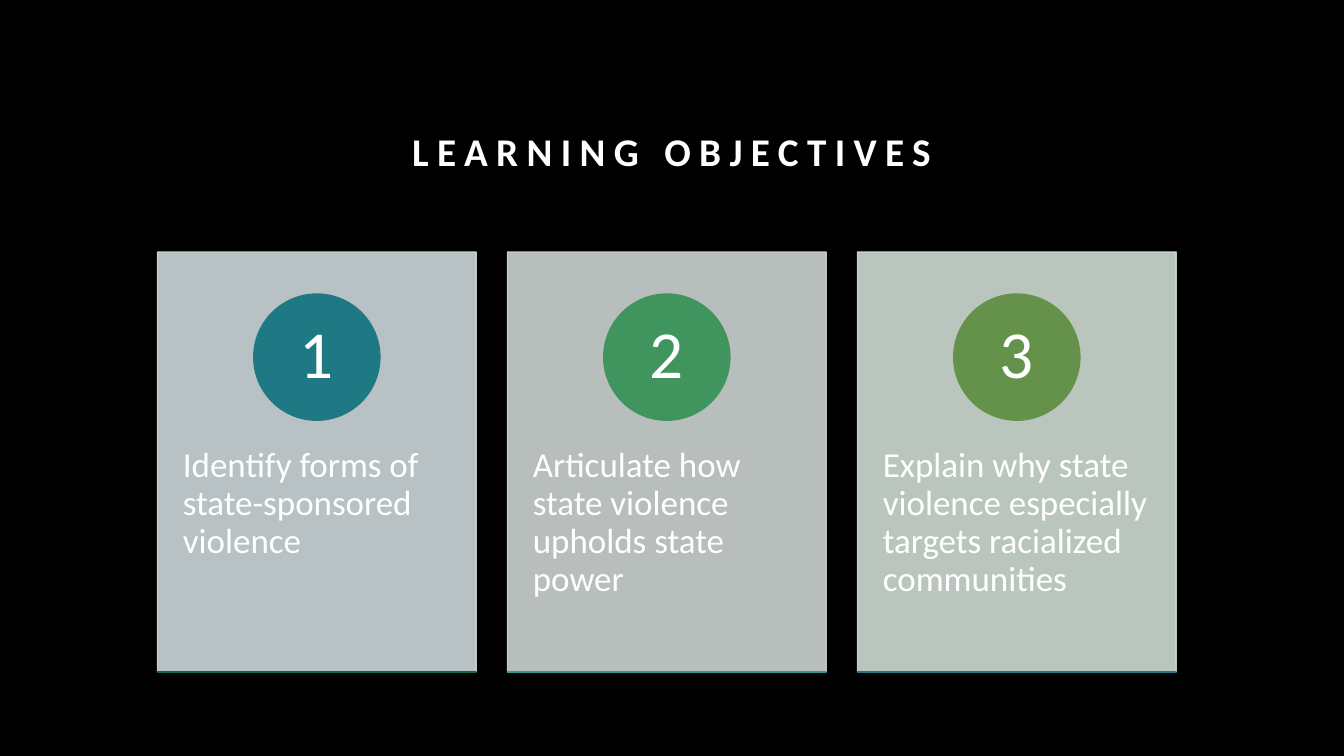
from lxml import etree
from pptx import Presentation
from pptx.dml.color import RGBColor
from pptx.enum import shapes, text
from pptx.oxml import ns
from pptx.util import Cm, Pt

# Content: number, goal, card colour, disc colour, base colour
TITLE = "LEARNING OBJECTIVES"
GOALS = [
    ("1", "Identify forms of state-sponsored violence", "mist", "teal", "pine"),
    ("2", "Articulate how state violence upholds state power", "ash", "green", "aqua"),
    ("3", "Explain why state violence especially targets racialized communities",
     "sage", "moss", "teal"),
]
HUES = {
    "black": "000000", "white": "FFFFFF",
    "mist": "CDD7D9", "ash": "CCD3D1", "sage": "CFDCD2",
    "teal": "1F7985", "green": "40945E", "moss": "64924A",
    "pine": "0D6756", "aqua": "389896",
}
FONT = "Calibri"

# Layout in centimetres
LEFT, TOP, WIDE, HIGH = 3.97, 6.35, 8.03, 10.58
STEP = 8.82
DISC, DROP = 3.18, 1.06
INNER = 2.24
GOAL_TOP, GOAL_HIGH = 10.37, 6.35


def hue(name):
    return RGBColor.from_string(HUES[name])


def fade(shape, part):
    for tint in shape._element.spPr.iter(ns.qn("a:srgbClr")):
        etree.SubElement(tint, ns.qn("a:alpha")).set("val", str(part * 1000))


def block(kind, x, y, w, h, name):
    shape = slide.shapes.add_shape(kind, Cm(x), Cm(y), Cm(w), Cm(h))
    shape.shadow.inherit = False
    shape.fill.solid()
    shape.fill.fore_color.rgb = hue(name)
    shape.line.color.rgb = hue(name)
    shape.line.width = Pt(1)
    return shape


def write(words, x, y, w, h, size, pad, anchor, align, lead):
    frame = slide.shapes.add_textbox(Cm(x), Cm(y), Cm(w), Cm(h)).text_frame
    frame.word_wrap = True
    frame.vertical_anchor = anchor
    frame.margin_left = frame.margin_right = Cm(pad[0])
    frame.margin_top = frame.margin_bottom = Cm(pad[1])
    para = frame.paragraphs[0]
    para.alignment = align
    para.line_spacing = lead
    run = para.add_run()
    run.text = words
    run.font.name = FONT
    run.font.size = Pt(size)
    run.font.color.rgb = hue("white")
    return run


deck = Presentation()
deck.slide_width, deck.slide_height = Cm(33.87), Cm(19.05)
slide = deck.slides.add_slide(deck.slide_layouts[6])
slide.background.fill.solid()
slide.background.fill.fore_color.rgb = hue("black")

KIND, ANCHOR, ALIGN = shapes.MSO_SHAPE, text.MSO_ANCHOR, text.PP_ALIGN

# Title with wide letter spacing
head = write(TITLE, 4.23, 2.12, 25.4, 2.41, 28, (0.25, 0.13),
             ANCHOR.BOTTOM, ALIGN.CENTER, 1.2)
head.font.bold = True
head.font._element.set("spc", "600")

# Cards
for i, (num, goal, card, disc, base) in enumerate(GOALS):
    x = LEFT + i * STEP
    mid = x + WIDE / 2
    fade(block(KIND.RECTANGLE, x, TOP, WIDE, HIGH, card), 90)
    write(goal, x, GOAL_TOP, WIDE, GOAL_HIGH, 25, (0.64, 0.91),
          ANCHOR.TOP, ALIGN.LEFT, 0.9)

    # Numbered disc
    y = TOP + DROP
    block(KIND.OVAL, mid - DISC / 2, y, DISC, DISC, disc)
    write(num, mid - INNER / 2, y + (DISC - INNER) / 2, INNER, INNER, 48,
          (0.25, 0.03), ANCHOR.MIDDLE, ALIGN.CENTER, 0.9)

    # Base line
    block(KIND.RECTANGLE, x, TOP + HIGH, WIDE, 0, base)

deck.save("out.pptx")
